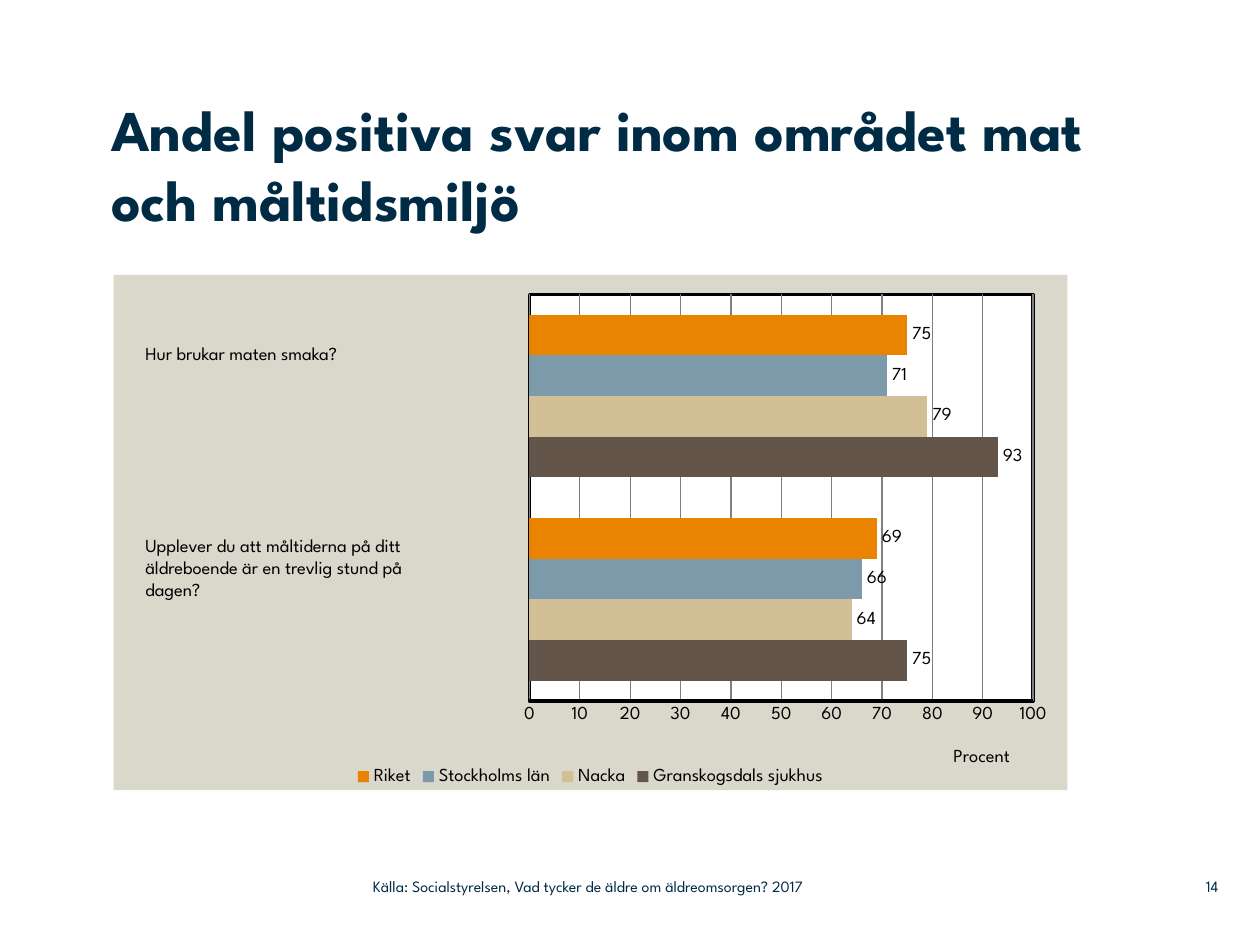
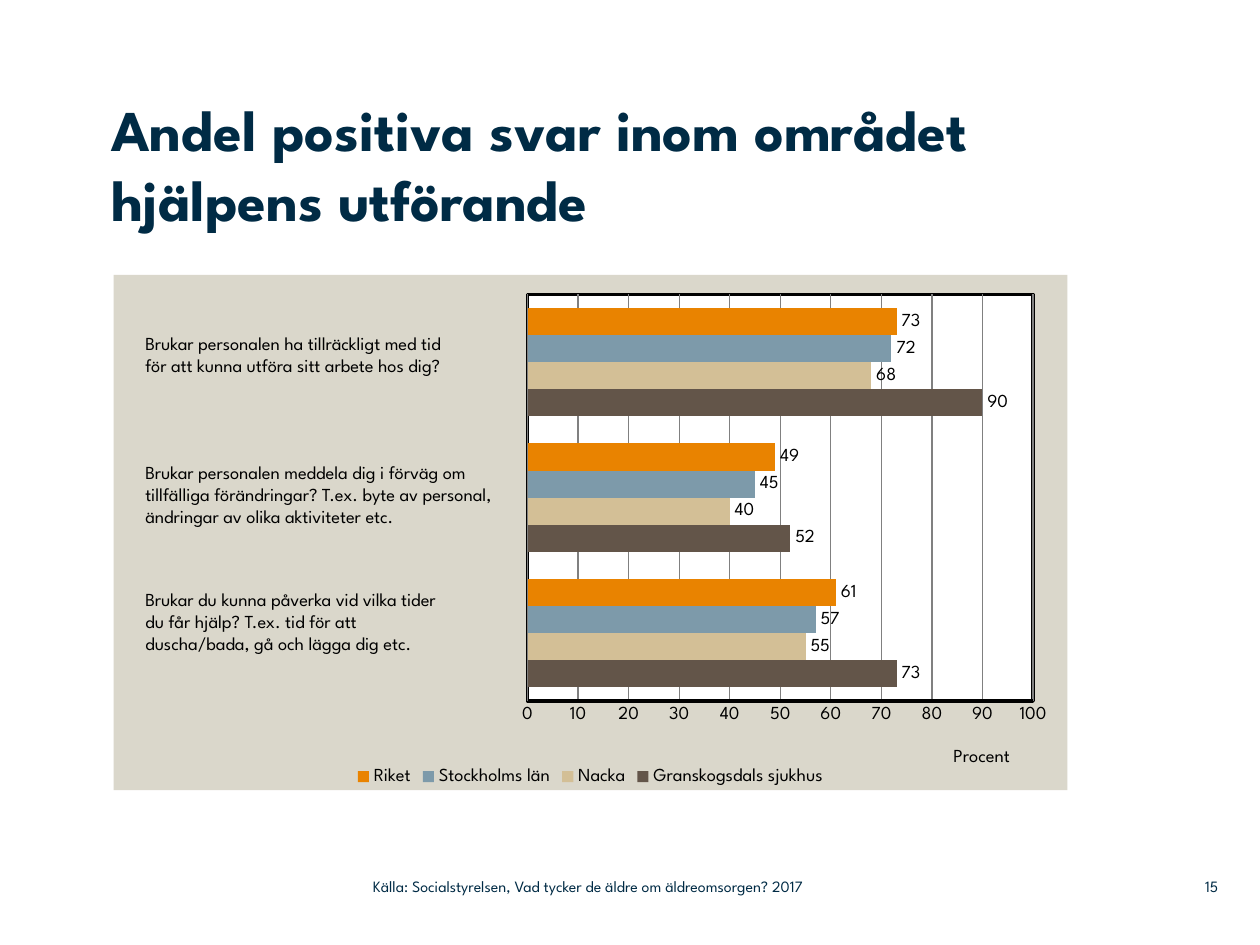
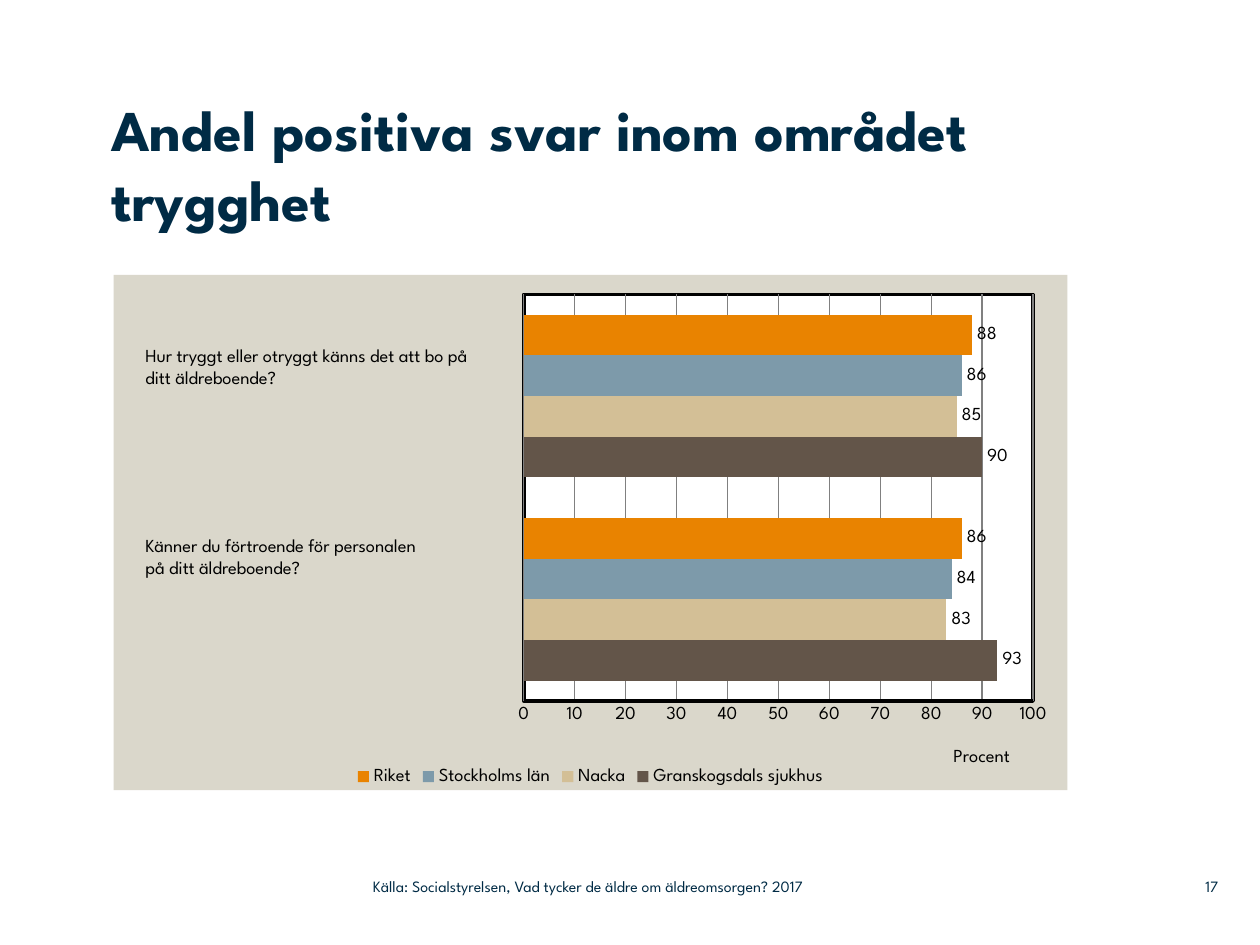
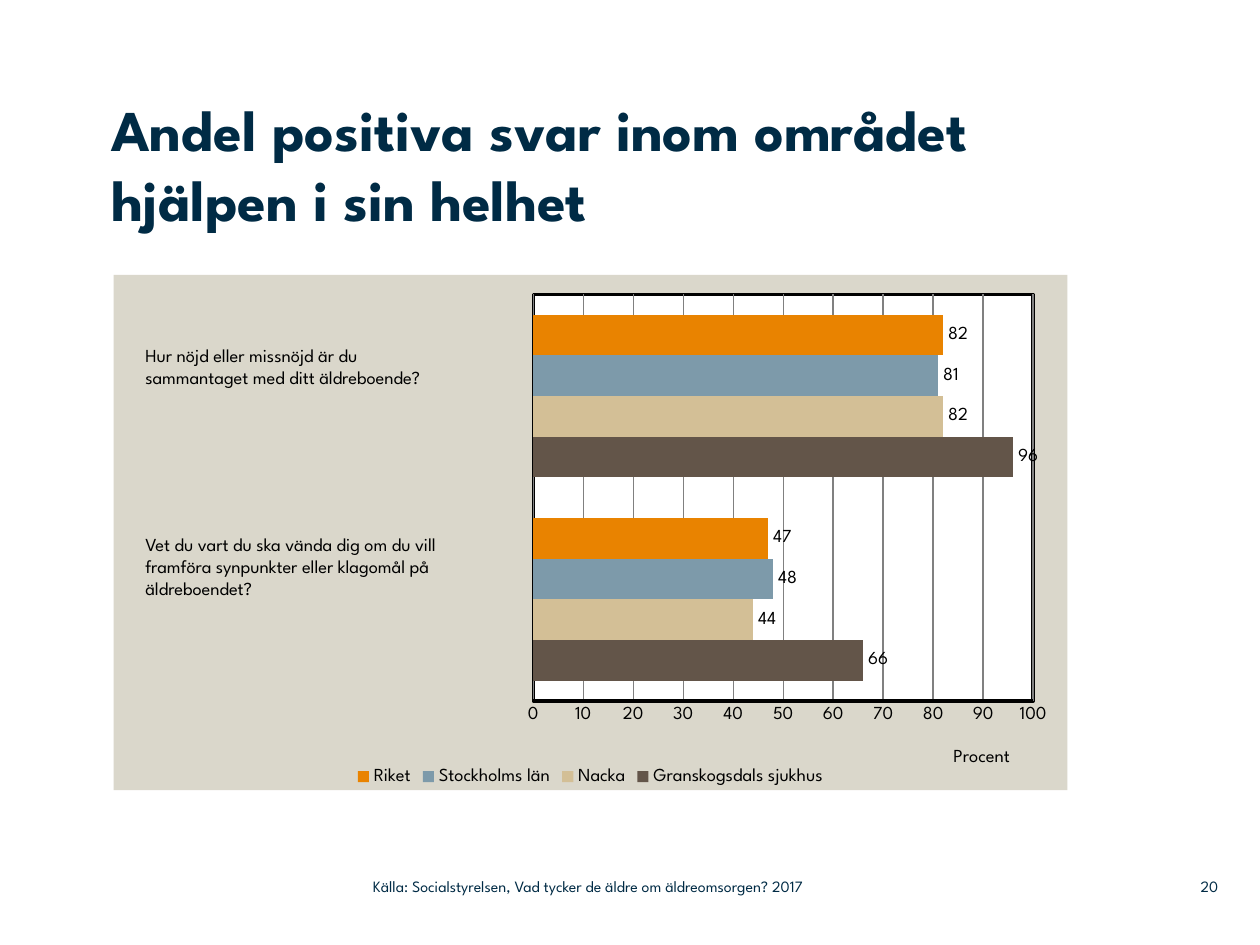
from lxml import etree
from pptx import Presentation
from pptx import util as u
from pptx.chart.data import CategoryChartData
from pptx.dml.color import RGBColor
from pptx.enum import chart as ch, text
from pptx.oxml import parse_xml
from pptx.oxml.ns import nsdecls, qn

FONT = "League Spartan"
COLORS = {"navy": "002B45", "black": "000000", "panel": "DAD7CB",
          "plot": "FFFFFF", "grid": "808080"}
SOURCE = "Källa: Socialstyrelsen, Vad tycker de äldre om äldreomsorgen? 2017"
AXIS_TITLE = "Procent"

# Respondent groups and bar colours, from the bottom bar to the top one
GROUPS = [("Granskogsdals sjukhus", "635549"), ("Nacka", "D3BF96"),
          ("Stockholms län", "7D9AAA"), ("Riket", "E98300")]

# questions: (top in cm, lines, text); scores: one row per group, lowest category first
SLIDES = [
    {"number": 14, "title": "Andel positiva svar inom området mat och måltidsmiljö",
     "title_width": 21.39, "plot_left": 0.436,
     "scores": [(75, 93), (64, 79), (66, 71), (69, 75)],
     "questions": [
         (6.78, 1, "Hur brukar maten smaka?"),
         (10.64, 3, "Upplever du att måltiderna på ditt äldreboende är en trevlig "
                    "stund på\ndagen?")]},
    {"number": 15, "title": "Andel positiva svar inom området hjälpens utförande",
     "title_width": 19.3, "plot_left": 0.434,
     "scores": [(73, 52, 90), (55, 40, 68), (57, 45, 72), (61, 49, 73)],
     "questions": [
         (6.58, 2, "Brukar personalen ha tillräckligt med tid\n"
                   "för att kunna utföra sitt arbete hos dig?"),
         (9.17, 3, "Brukar personalen meddela dig i förväg om tillfälliga förändringar? "
                   "T.ex. byte av personal, ändringar av olika aktiviteter etc."),
         (11.73, 3, "Brukar du kunna påverka vid vilka tider\n"
                    "du får hjälp? T.ex. tid för att\n"
                    "duscha/bada, gå och lägga dig etc.")]},
    {"number": 17, "title": "Andel positiva svar inom området trygghet",
     "title_width": 19.3, "plot_left": 0.43,
     "scores": [(93, 90), (83, 85), (84, 86), (86, 88)],
     "questions": [
         (6.81, 2, "Hur tryggt eller otryggt känns det att bo på ditt äldreboende?"),
         (10.64, 2, "Känner du förtroende för personalen\npå ditt äldreboende?")]},
    {"number": 20, "title": "Andel positiva svar inom området hjälpen i sin helhet",
     "title_width": 19.3, "plot_left": 0.44,
     "scores": [(66, 96), (44, 82), (48, 81), (47, 82)],
     "questions": [
         (6.81, 2, "Hur nöjd eller missnöjd är du\nsammantaget med ditt äldreboende?"),
         (10.62, 3, "Vet du vart du ska vända dig om du vill framföra synpunkter "
                    "eller klagomål på äldreboendet?")]},
]

CHART_BOX = (2.29, 5.54, 19.23, 10.39)
PLOT_TOP, PLOT_RIGHT, PLOT_HEIGHT = 0.038, 0.964, 0.789
QUESTION_LEFT, QUESTION_WIDTH = 2.68, 7.54
LINE_HEIGHT, BOX_PADDING = 0.45, 0.25
SOURCE_BOX = (7.52, 17.5, 11.25, 0.74)
NUMBER_BOX = (23.37, 17.5, 1.19, 0.74)


def cm(values):
    return [u.Cm(value) for value in values]


def style(font, size, color, bold=False):
    font.name, font.size, font.bold = FONT, u.Pt(size), bold
    font.color.rgb = RGBColor.from_string(COLORS[color])


def write(frame, content, size, color, bold=False, align=text.PP_ALIGN.LEFT):
    frame.text = content
    frame.word_wrap = True
    for paragraph in frame.paragraphs:
        paragraph.alignment = align
        for run in paragraph.runs:
            style(run.font, size, color, bold)


def clear_margins(frame):
    frame.margin_left = frame.margin_right = frame.margin_top = frame.margin_bottom = 0


def add_title(slide, content, width):
    title = slide.shapes.title
    title.left, title.top, title.width, title.height = cm((2.24, 1.9, width, 3.61))
    frame = title.text_frame
    write(frame, content, 33, "navy", bold=True)
    clear_margins(frame)
    frame.vertical_anchor = text.MSO_ANCHOR.TOP
    frame.auto_size = text.MSO_AUTO_SIZE.NONE


def add_footer(slide, box, content, align=text.PP_ALIGN.LEFT):
    frame = slide.shapes.add_textbox(*cm(box)).text_frame
    write(frame, content, 9, "navy", align=align)
    clear_margins(frame)
    frame.vertical_anchor = text.MSO_ANCHOR.MIDDLE


def add_question(slide, top, lines, content):
    box = (QUESTION_LEFT, top, QUESTION_WIDTH, BOX_PADDING + LINE_HEIGHT * lines)
    frame = slide.shapes.add_textbox(*cm(box)).text_frame
    write(frame, content, 10.5, "black")
    frame.auto_size = text.MSO_AUTO_SIZE.SHAPE_TO_FIT_TEXT


def set_layout(parent, index, target=None, **fractions):
    """Place a chart part by fractions of the chart's size."""
    for old in parent.findall(qn("c:layout")):
        parent.remove(old)
    layout = parse_xml(f"<c:layout {nsdecls('c')}><c:manualLayout/></c:layout>")
    settings = {"layoutTarget": target} if target else {}
    settings.update(xMode="edge", yMode="edge", **fractions)
    for tag, value in settings.items():
        etree.SubElement(layout[0], qn("c:" + tag)).set("val", str(value))
    parent.insert(index, layout)


def area_format(fill, line):
    return parse_xml(
        f'<c:spPr {nsdecls("c", "a")}><a:solidFill><a:srgbClr val="{fill}"/></a:solidFill>'
        f"{line}</c:spPr>")


def set_line(line, color, width):
    line.color.rgb = RGBColor.from_string(COLORS[color])
    line.width = u.Pt(width)


def add_score_chart(slide, scores, plot_left):
    data = CategoryChartData(number_format="0")
    data.categories = [str(n + 1) for n in range(len(scores[0]))]
    for (group, _), values in zip(GROUPS, scores):
        data.add_series(group, values)
    chart = slide.shapes.add_chart(
        ch.XL_CHART_TYPE.BAR_CLUSTERED, *cm(CHART_BOX), data).chart
    chart.has_title = False
    style(chart.font, 10.5, "black")

    # Bars and their values
    plot = chart.plots[0]
    plot.gap_width, plot.overlap, plot.vary_by_categories = 100, 0, False
    for series, (_, color) in zip(plot.series, GROUPS):
        series.format.fill.solid()
        series.format.fill.fore_color.rgb = RGBColor.from_string(color)
        labels = series.data_labels
        labels.show_value = True
        labels.position = ch.XL_LABEL_POSITION.OUTSIDE_END
        style(labels.font, 10.5, "black")

    # Axes and legend
    chart.category_axis.visible = False
    axis = chart.value_axis
    axis.minimum_scale, axis.maximum_scale, axis.major_unit = 0, 100, 10
    axis.major_tick_mark = axis.minor_tick_mark = ch.XL_TICK_MARK.NONE
    set_line(axis.format.line, "black", 2)
    set_line(axis.major_gridlines.format.line, "grid", 0.75)
    style(axis.tick_labels.font, 10.5, "black")
    write_title = axis.axis_title.text_frame
    write_title.text = AXIS_TITLE
    style(write_title.paragraphs[0].runs[0].font, 10.5, "black")
    chart.has_legend = True
    chart.legend.position = ch.XL_LEGEND_POSITION.BOTTOM
    chart.legend.include_in_layout = False
    style(chart.legend.font, 10.5, "black")

    # Panel, framed plot area and the places of both
    space = chart.element
    space.find(qn("c:chart")).addnext(
        area_format(COLORS["panel"], "<a:ln><a:noFill/></a:ln>"))
    area = space.find(".//" + qn("c:plotArea"))
    frame_line = (f'<a:ln w="{u.Pt(2)}"><a:solidFill>'
                  f'<a:srgbClr val="{COLORS["black"]}"/></a:solidFill></a:ln>')
    area.append(area_format(COLORS["plot"], frame_line))
    set_layout(area, 0, "inner", x=plot_left, y=PLOT_TOP,
               w=round(PLOT_RIGHT - plot_left, 3), h=PLOT_HEIGHT)
    set_layout(area.find(".//" + qn("c:title")), 1, x=0.877, y=0.91)


def main():
    deck = Presentation()
    deck.slide_width, deck.slide_height = cm((25.4, 19.05))
    title_only = deck.slide_layouts[5]
    for page in SLIDES:
        slide = deck.slides.add_slide(title_only)
        add_title(slide, page["title"], page["title_width"])
        add_score_chart(slide, page["scores"], page["plot_left"])
        for question in page["questions"]:
            add_question(slide, *question)
        add_footer(slide, NUMBER_BOX, str(page["number"]), text.PP_ALIGN.RIGHT)
        add_footer(slide, SOURCE_BOX, SOURCE)
    deck.save("out.pptx")


if __name__ == "__main__":
    main()
